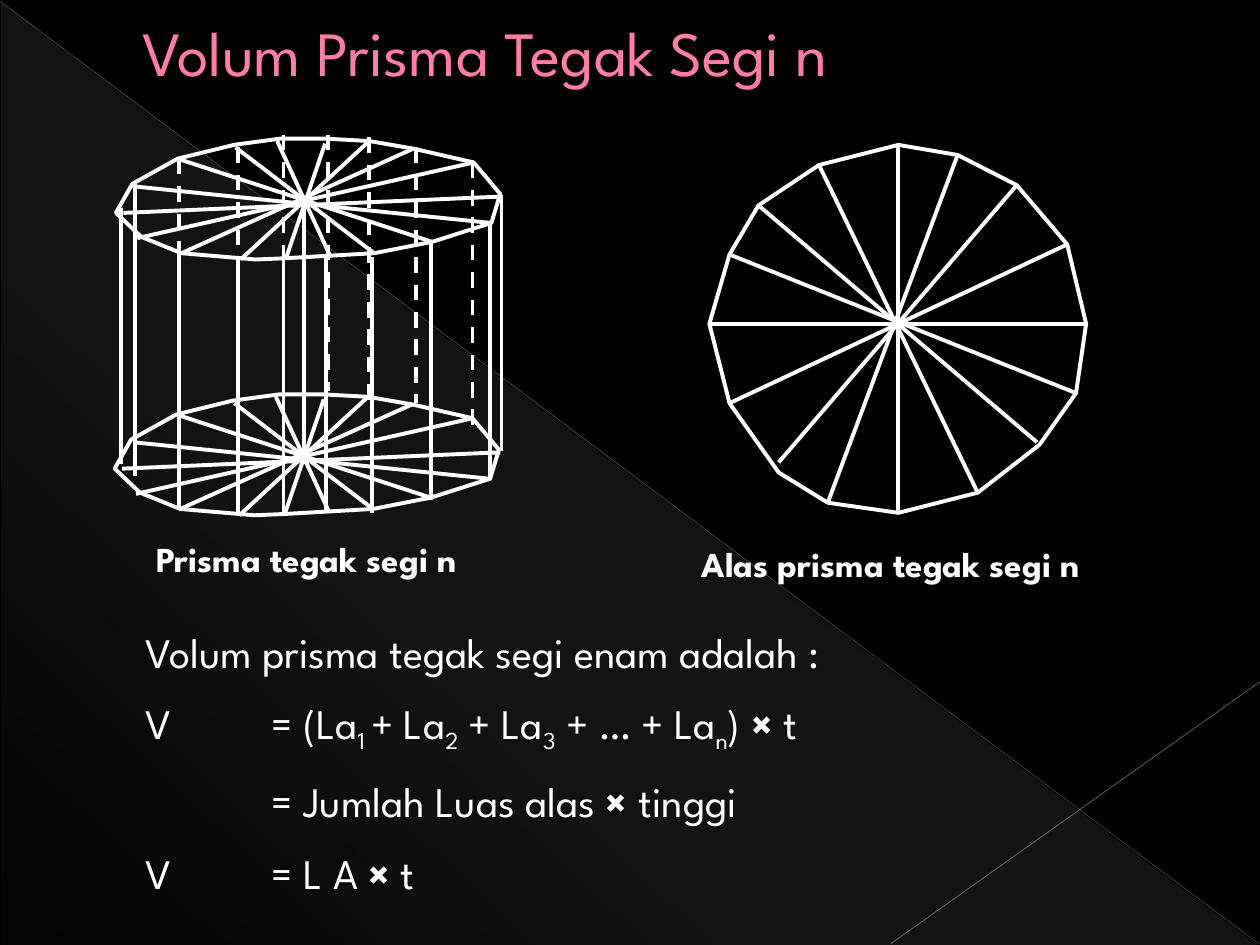
from lxml import etree
from pptx import Presentation, util as u
from pptx.dml.color import RGBColor
from pptx.enum import dml, shapes, text
from pptx.oxml.ns import qn

PX = 9144  # 100 px to the inch
FONT = "League Spartan"
WHITE = "FFFFFF"

# Spokes and rim of the top face; the bottom face is the same, shifted
SPOKES = [(98, 169, 398, 156), (107, 148, 390, 177), (141, 126, 343, 192),
          (187, 117, 297, 201), (220, 112, 262, 203), (258, 114, 227, 205),
          (293, 112, 191, 206), (328, 118, 144, 201), (376, 129, 109, 189)]
RIM = [(92, 169), (105, 146), (141, 126), (186, 115), (223, 110), (257, 110),
       (293, 112), (328, 118), (376, 129), (397, 154), (390, 177), (343, 192),
       (297, 201), (262, 203), (227, 205), (203, 206), (144, 201), (112, 188)]
SHIFT = (-1, 203)

# Upright edges: x, top, bottom
EDGES = [(241, 155, 368), (96, 165, 368), (107, 184, 378), (142, 194, 403),
         (189, 204, 407), (225, 204, 407), (259, 204, 405), (295, 204, 407),
         (342, 194, 397), (389, 175, 381), (398, 155, 358), (107, 146, 349)]
HIDDEN = [(142, 126, 329), (189, 117, 320), (225, 107, 320), (260, 107, 310),
          (293, 109, 322), (330, 117, 320), (375, 129, 341)]

BASE_SPOKES = [(713, 115, 713, 407), (563, 257, 862, 257), (807, 147, 618, 367),
               (602, 163, 823, 351), (650, 131, 776, 391), (760, 123, 657, 399),
               (579, 202, 854, 312), (847, 194, 579, 320)]
BASE_RIM = [(563, 257), (579, 202), (602, 163), (650, 131), (713, 115),
            (760, 123), (807, 147), (847, 194), (862, 257), (854, 312),
            (825, 353), (776, 391), (713, 407), (657, 399), (618, 375), (579, 320)]

# Each line is a list of (text, kind) pieces
FORMULA = [
    [("Volum prisma tegak segi enam adalah :", "")],
    [("V \t= (La", ""), ("1 ", "sub"), ("+ La", ""), ("2", "sub"), (" + La", ""),
     ("3", "sub"), (" + … + La", ""), ("n", "sub"), (") ", ""), ("×", "bold"), (" t", "")],
    [("\t= Jumlah Luas alas ", ""), ("× ", "bold"), ("tinggi", "")],
    [("V\t= L A ", ""), ("×", "bold"), (" t", "")],
]


def rgb(code):
    return RGBColor.from_string(code)


def fade(parent, code, alpha):
    """Add a part-transparent colour (alpha in percent) to an XML parent."""
    clr = etree.SubElement(parent, qn("a:srgbClr"), val=code)
    etree.SubElement(clr, qn("a:alpha"), val=str(alpha * 1000))


class Board:
    def __init__(self, slide):
        self.slide = slide
        self.host = slide.shapes
        back = slide.background.fill
        back.solid()
        back.fore_color.rgb = rgb("000000")

    def group(self):
        """Send the lines and outlines that follow into a new group."""
        self.host = self.slide.shapes.add_group_shape().shapes

    def stroke(self, line, code=WHITE, width=2.25):
        line.fill.solid()
        line.color.rgb = rgb(code)
        line.width = u.Pt(width)

    def line(self, x1, y1, x2, y2, code=WHITE, width=2.25, alpha=100, dash=False):
        part = self.host.add_connector(
            shapes.MSO_CONNECTOR.STRAIGHT, *(v * PX for v in (x1, y1, x2, y2)))
        self.stroke(part.line, code, width)
        if dash:
            part.line.dash_style = dml.MSO_LINE.DASH
        props = part.element.spPr
        if alpha < 100:
            fill = props.find(qn("a:ln")).find(qn("a:solidFill"))
            fill.remove(fill[0])
            fade(fill, code, alpha)
        etree.SubElement(props, qn("a:effectLst"))

    def outline(self, points):
        pen = self.host.build_freeform(*points[0], scale=PX)
        pen.add_line_segments(points[1:], close=True)
        part = pen.convert_to_shape()
        part.shadow.inherit = False
        part.fill.background()
        self.stroke(part.line)

    def wheel(self, spokes, rim, dx=0, dy=0):
        """Draw a many-sided face with its spokes."""
        for x1, y1, x2, y2 in spokes:
            self.line(x1 + dx, y1 + dy, x2 + dx, y2 + dy)
        self.outline([(x + dx, y + dy) for x, y in rim])

    def wedge(self, x, y, w, h, code, stops, angle):
        """Draw a right triangle that fades through (place, alpha) stops."""
        part = self.host.add_shape(
            shapes.MSO_SHAPE.RIGHT_TRIANGLE, *(v * PX for v in (x, y, w, h)))
        part.shadow.inherit = False
        part.line.fill.background()
        part.fill.gradient()
        grad = part.element.spPr.find(qn("a:gradFill"))
        for child in list(grad):
            grad.remove(child)
        ramp = etree.SubElement(grad, qn("a:gsLst"))
        for place, alpha in stops:
            fade(etree.SubElement(ramp, qn("a:gs"), pos=str(place * 1000)), code, alpha)
        etree.SubElement(grad, qn("a:lin"), ang=str(angle * 60000), scaled="0")

    def style(self, run, size, code=WHITE, kind=""):
        font = run.font
        font.name, font.size = FONT, u.Pt(size)
        font.color.rgb = rgb(code)
        font.bold = kind == "bold"
        if kind == "sub":
            run._r.get_or_add_rPr().set("baseline", "-25000")

    def note(self, x, y, w, h, lines, size):
        box = self.slide.shapes.add_textbox(*(v * PX for v in (x, y, w, h)))
        frame = box.text_frame
        frame.word_wrap = True
        for i, pieces in enumerate(lines):
            para = frame.add_paragraph() if i else frame.paragraphs[0]
            if i:
                para.space_before = u.Pt(size / 2)
            tabs = etree.SubElement(para._p.get_or_add_pPr(), qn("a:tabLst"))
            etree.SubElement(tabs, qn("a:tab"), pos=str(100 * PX), algn="l")
            for words, kind in pieces:
                run = para.add_run()
                run.text = words
                self.style(run, size, kind=kind)

    def title(self, x, y, w, h, words, inset):
        part = self.slide.shapes.title
        part.left, part.top, part.width, part.height = (v * PX for v in (x, y, w, h))
        frame = part.text_frame
        frame.text = words
        frame.word_wrap = True
        frame.auto_size = text.MSO_AUTO_SIZE.NONE
        frame.vertical_anchor = text.MSO_ANCHOR.MIDDLE
        frame.margin_left = inset * PX
        para = frame.paragraphs[0]
        para.alignment = text.PP_ALIGN.LEFT
        self.style(para.runs[0], 36, "FF7DA7")
        self.slide.shapes.element.append(part.element)  # bring to front


def main():
    deck = Presentation()
    deck.slide_width, deck.slide_height = 1000 * PX, 750 * PX
    board = Board(deck.slides.add_slide(deck.slide_layouts[5]))

    board.wedge(1, 2, 998, 748, "D2D2D2", [(0, 10), (70, 8), (100, 1)], 133)
    board.line(0, 1, 999, 749, "BFBFBF", 0.39, 35)
    board.line(1000, 541, 707, 749, "C6C6C6", 0.47, 45)

    board.group()
    board.wheel(SPOKES, RIM)
    board.wheel(SPOKES, RIM, *SHIFT)
    for edges, dash in ((EDGES, False), (HIDDEN, True)):
        for x, top, end in edges:
            board.line(x, top, x, end, dash=dash)

    board.group()
    board.wheel(BASE_SPOKES, BASE_RIM)

    board.note(106, 492, 780, 230, FORMULA, 24)
    board.note(114, 422, 284, 43, [[("Prisma tegak segi n", "bold")]], 20)
    board.note(547, 426, 370, 43, [[("Alas prisma tegak segi n", "bold")]], 20)
    board.title(50, 14, 900, 54, "Volum Prisma Tegak Segi n", 63)
    deck.save("out.pptx")


if __name__ == "__main__":
    main()
